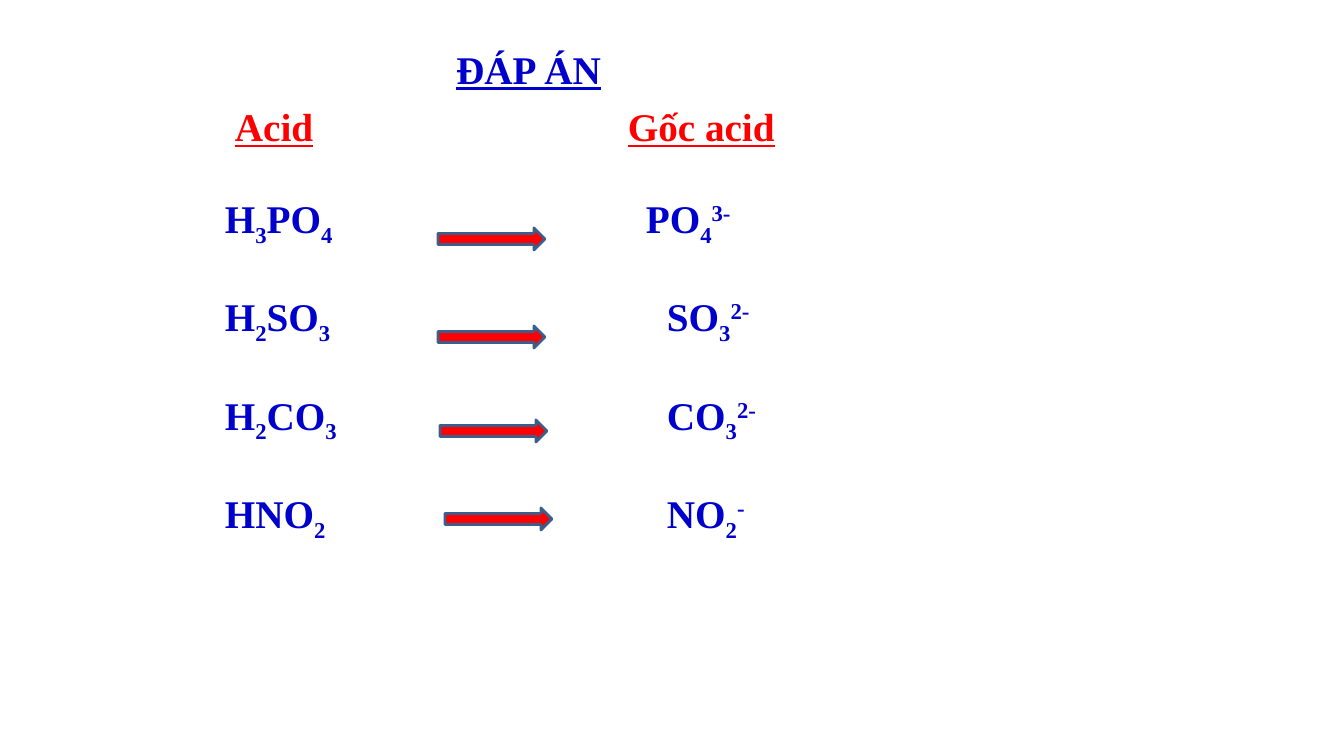
from dataclasses import dataclass
from itertools import groupby

from lxml.etree import SubElement
from pptx import Presentation
from pptx.dml.color import RGBColor
from pptx.enum.shapes import MSO_SHAPE as Preset
from pptx.enum.text import MSO_ANCHOR as Anchor, PP_ALIGN as Align
from pptx.oxml.ns import qn
from pptx.util import Emu, Pt

FONT = "Times New Roman"
BLUE, RED, STEEL = "0000CC", "FF0000", "3A5F8C"
SUBSCRIPT, SUPERSCRIPT = -25, 30
ACID_TAB, ACID_HEADING_TAB, RESIDUE_HEADING_TAB = 101, 111, 504


@dataclass(frozen=True)
class Reaction:
    acid: str
    residue: str
    charge: str
    residue_tab: int
    arrow_left: int
    arrow_top: int


REACTIONS = [
    Reaction("H3PO4", "PO4", "3-", 522, 438, 228),
    Reaction("H2SO3", "SO3", "2-", 543, 438, 326),
    Reaction("H2CO3", "CO3", "2-", 543, 440, 420),
    Reaction("HNO2", "NO2", "-", 543, 445, 508),
]


def px(value: int) -> Emu:
    return Emu(round(value * 914400 / 100.8))


def color(hex_value: str) -> RGBColor:
    return RGBColor.from_string(hex_value)


def add_run(paragraph, text: str, hex_value: str = BLUE,
            underline: bool = False, baseline: int = 0) -> None:
    run = paragraph.add_run()
    run.text = text
    font = run.font
    font.name, font.size, font.bold = FONT, Pt(28), True
    font.underline = underline
    font.color.rgb = color(hex_value)
    if baseline:
        font._element.set("baseline", str(baseline * 1000))


def add_formula(paragraph, formula: str) -> None:
    for is_digit, letters in groupby(formula, str.isdigit):
        add_run(paragraph, "".join(letters), baseline=SUBSCRIPT if is_digit else 0)


def set_tabs(paragraph, *positions: int) -> None:
    tab_list = SubElement(paragraph._p.get_or_add_pPr(), qn("a:tabLst"))
    for position in positions:
        SubElement(tab_list, qn("a:tab"), pos=str(px(position)), algn="l")


def add_title(slide) -> None:
    title = slide.shapes.title
    title.left, title.top, title.width, title.height = map(px, (299, 23, 459, 91))
    title.text_frame.vertical_anchor = Anchor.MIDDLE
    paragraph = title.text_frame.paragraphs[0]
    paragraph.alignment = Align.CENTER
    add_run(paragraph, "ĐÁP ÁN", underline=True)


def add_answers(slide) -> None:
    frame = slide.shapes.add_textbox(*map(px, (114, 128, 1136, 421))).text_frame
    frame.word_wrap = True
    frame.vertical_anchor = Anchor.MIDDLE
    frame.margin_bottom = px(37)

    # Column headings
    heading = frame.paragraphs[0]
    set_tabs(heading, ACID_HEADING_TAB, RESIDUE_HEADING_TAB)
    for text in ("Acid", "Gốc acid"):
        add_run(heading, "\t")
        add_run(heading, text, RED, underline=True)

    # Acid and residue on each line
    for reaction in REACTIONS:
        paragraph = frame.add_paragraph()
        paragraph.space_before = Pt(32)
        set_tabs(paragraph, ACID_TAB, reaction.residue_tab)
        add_run(paragraph, "\t")
        add_formula(paragraph, reaction.acid)
        add_run(paragraph, "\t")
        add_formula(paragraph, reaction.residue)
        add_run(paragraph, reaction.charge, baseline=SUPERSCRIPT)


def add_arrow(slide, reaction: Reaction) -> None:
    arrow = slide.shapes.add_shape(
        Preset.RIGHT_ARROW, px(reaction.arrow_left), px(reaction.arrow_top), px(107), px(22))
    arrow.shadow.inherit = False
    arrow.fill.solid()
    arrow.fill.fore_color.rgb = color(RED)
    arrow.line.color.rgb = color(STEEL)
    arrow.line.width = Pt(2)


def main() -> None:
    presentation = Presentation()
    presentation.slide_width, presentation.slide_height = px(1344), px(756)
    title_only = presentation.slide_layouts[5]
    slide = presentation.slides.add_slide(title_only)
    add_title(slide)
    add_answers(slide)
    for reaction in REACTIONS:
        add_arrow(slide, reaction)
    presentation.save("out.pptx")


if __name__ == "__main__":
    main()
